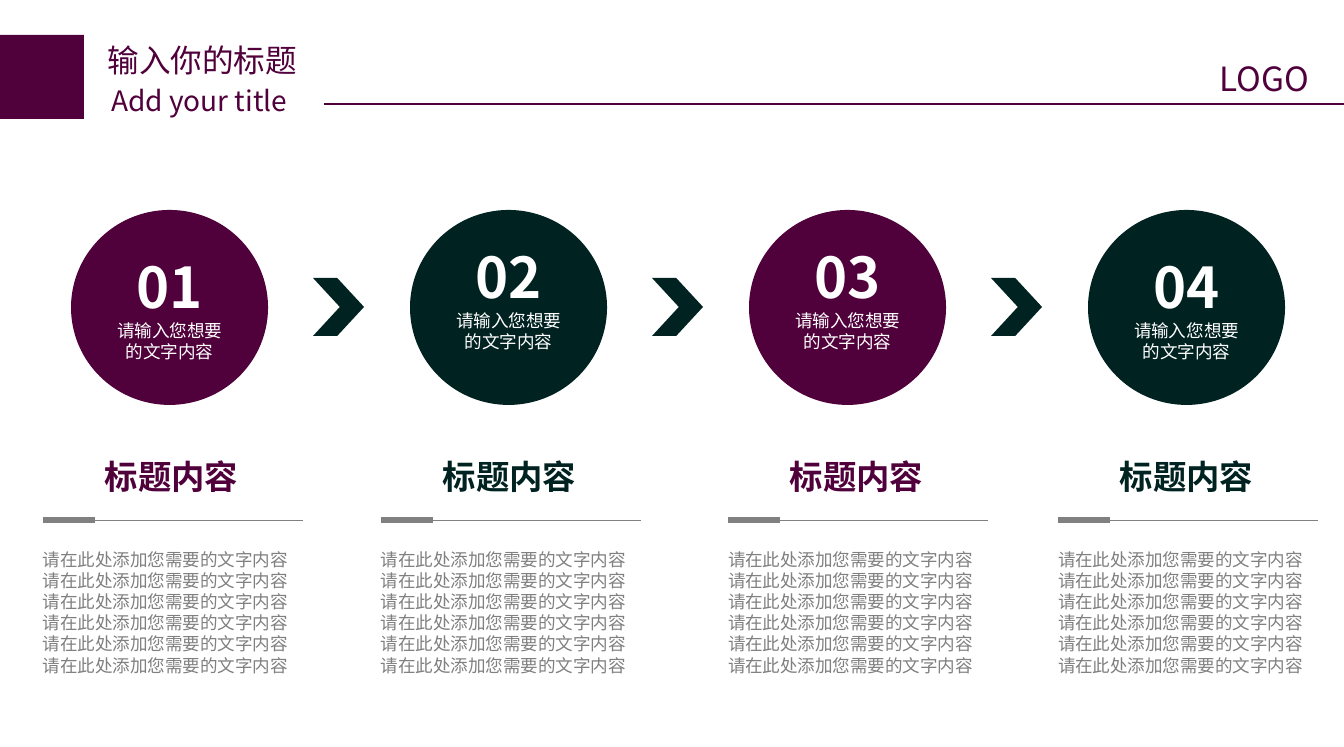
from lxml import etree
from pptx import Presentation
from pptx.dml.color import RGBColor
from pptx.enum.shapes import MSO_CONNECTOR as LineKind, MSO_SHAPE as Preset
from pptx.enum.text import MSO_ANCHOR as Anchor, PP_ALIGN as Align
from pptx.oxml.ns import qn
from pptx.util import Pt

COLORS = {"plum": "50003B", "pine": "002221", "gray": "808080", "white": "FFFFFF"}
SANS, BODY_FONT = "Noto Sans CJK SC", "Arial"

HEADER = [
    ("输入你的标题", 18, (95, 35, 219, 51), True),
    ("Add your title", 16, (99, 77, 219, 47), True),
    ("LOGO", 19, (1207, 52, 121, 53), False),
]
SENTENCE = "请在此处添加您需要的文字内容"
BODY = [SENTENCE * 4, SENTENCE, SENTENCE]
CAPTION = "请输入您想要的文字内容"
HEADING = "标题内容"
STEPS = [
    ("01", "plum", 43, 5),
    ("02", "pine", 381, 26),
    ("03", "plum", 728, 26),
    ("04", "pine", 1058, 5),
]

EMU_PER_PX = 7234
SLIDE_W, SLIDE_H = 1344, 747
STEP_PITCH = 339
CIRCLE = (71, 210, 197, 195)
CHEVRON = (313, 278, 51, 58)
RULE_Y, RULE_W, ACCENT_W = 520, 260, 52


def px(*lengths):
    return [length * EMU_PER_PX for length in lengths]


def color(name):
    return RGBColor.from_string(COLORS[name])


def add_filled(preset, box, fill):
    shape = slide.shapes.add_shape(preset, *px(*box))
    shape.shadow.inherit = False
    shape.fill.solid()
    shape.fill.fore_color.rgb = color(fill)
    shape.line.fill.background()
    return shape


def add_rule(x1, x2, y, ink, weight):
    rule = slide.shapes.add_connector(LineKind.STRAIGHT, *px(x1, y, x2, y))
    rule.line.color.rgb = color(ink)
    rule.line.width = Pt(weight)
    etree.SubElement(rule._element.spPr, qn("a:effectLst"))


def write(frame, lines, ink, align=Align.LEFT, face=SANS):
    for i, (text, size, bold) in enumerate(lines):
        paragraph = frame.add_paragraph() if i else frame.paragraphs[0]
        paragraph.text = text
        paragraph.alignment = align
        font = paragraph.font
        font.size, font.bold, font.name = Pt(size), bold, face
        font.color.rgb = color(ink)
        defaults = paragraph._p.pPr.find(qn("a:defRPr"))
        etree.SubElement(defaults, qn("a:ea"), typeface=SANS)


def set_margins(frame, left, top, right, bottom):
    frame.margin_left, frame.margin_top, frame.margin_right, frame.margin_bottom = px(
        left, top, right, bottom)


def add_text(box, lines, ink, wrap=True, **style):
    frame = slide.shapes.add_textbox(*px(*box)).text_frame
    frame.word_wrap = wrap
    write(frame, lines, ink, **style)
    return frame


deck = Presentation()
deck.slide_width, deck.slide_height = px(SLIDE_W, SLIDE_H)
slide = deck.slides.add_slide(deck.slide_layouts[6])

add_filled(Preset.RECTANGLE, (0, 35, 84, 84), "plum")
for text, size, box, wrap in HEADER:
    add_text(box, [(text, size, False)], "plum", wrap)
add_rule(324, SLIDE_W, 104, "plum", 0.75)

for i, (number, tone, column_x, bottom_margin) in enumerate(STEPS):
    shift = i * STEP_PITCH
    circle = add_filled(Preset.OVAL, (CIRCLE[0] + shift, *CIRCLE[1:]), tone)
    label = circle.text_frame
    label.word_wrap = True
    label.vertical_anchor = Anchor.MIDDLE
    set_margins(label, 10, 5, 10, bottom_margin)
    write(label, [(number, 32, True), (CAPTION, 10, False)], "white", Align.CENTER)

    if i < len(STEPS) - 1:
        chevron = add_filled(Preset.CHEVRON, (CHEVRON[0] + shift, *CHEVRON[1:]), "pine")
        chevron.adjustments[0] = 0.525

    add_text((column_x - 5, 450, 267, 53), [(HEADING, 19, True)], tone, align=Align.CENTER)
    add_rule(column_x, column_x + RULE_W, RULE_Y, "gray", 0.5)
    add_rule(column_x, column_x + ACCENT_W, RULE_Y, "gray", 3)
    body = add_text((column_x, 549, RULE_W, 148),
                    [(line, 10, False) for line in BODY], "gray", face=BODY_FONT)
    set_margins(body, 0, 0, 0, 0)

deck.save("out.pptx")
